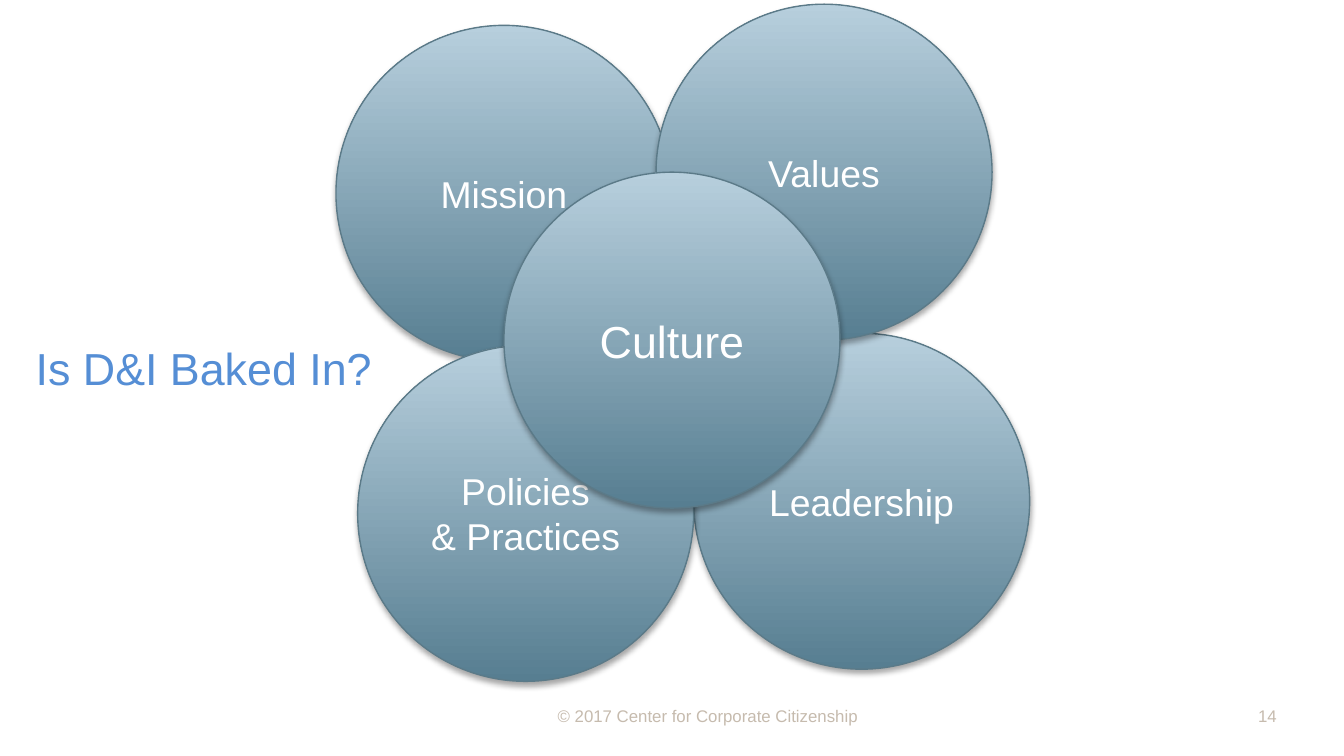
import dataclasses

import pptx
import pptx.dml.color
import pptx.enum.shapes
import pptx.enum.text
import pptx.oxml
import pptx.oxml.ns
import pptx.util

Cm = pptx.util.Cm
Pt = pptx.util.Pt
Rgb = pptx.dml.color.RGBColor.from_string
Align = pptx.enum.text.PP_ALIGN
Anchor = pptx.enum.text.MSO_ANCHOR
Fit = pptx.enum.text.MSO_AUTO_SIZE


@dataclasses.dataclass(frozen=True)
class Theme:
    """Colours, font and type sizes of the slide."""
    font: str = "Arial"
    title: str = "558ED5"
    deep: str = "577E91"
    pale: str = "B7CFDD"
    edge: str = "5B7A88"
    label: str = "FFFFFF"
    muted: str = "C6BBAE"
    shade: str = "000000"
    large: int = 24
    body: int = 20
    small: int = 9


@dataclasses.dataclass(frozen=True)
class Box:
    """A region measured in centimetres."""
    left: float
    top: float
    width: float
    height: float

    def place(self, shape):
        """Move and size a shape to fill this box."""
        shape.left, shape.top = Cm(self.left), Cm(self.top)
        shape.width, shape.height = Cm(self.width), Cm(self.height)


THEME = Theme()


def write(shape, text, *, size, color, align=Align.LEFT, wrap=True, inset=None, fit=Fit.NONE):
    """Fill a shape with formatted text, one paragraph per line."""
    frame = shape.text_frame
    frame.text = text
    frame.auto_size = fit
    frame.word_wrap = wrap
    frame.vertical_anchor = Anchor.MIDDLE
    if inset is not None:
        frame.margin_left = frame.margin_right = Cm(inset)
        frame.margin_top = frame.margin_bottom = Cm(inset)
    for para in frame.paragraphs:
        para.alignment = align
        para.font.name = THEME.font
        para.font.size = Pt(size)
        para.font.color.rgb = Rgb(color)


def shadow(shape):
    """Give a shape a soft shadow straight below it."""
    shape.shadow.inherit = False
    effects = shape._element.spPr.find(pptx.oxml.ns.qn("a:effectLst"))
    effects.append(pptx.oxml.parse_xml(
        f'<a:outerShdw {pptx.oxml.ns.nsdecls("a")} blurRad="{Pt(3.1)}" dist="{Pt(1.8)}" '
        f'dir="5400000" rotWithShape="0"><a:srgbClr val="{THEME.shade}">'
        '<a:alpha val="35000"/></a:srgbClr></a:outerShdw>'))


def circle(slide, box, text, size):
    """Draw one labelled gradient circle."""
    shape = slide.shapes.add_shape(pptx.enum.shapes.MSO_SHAPE.OVAL, 0, 0, 0, 0)
    box.place(shape)
    shape.fill.gradient()
    shape.fill.gradient_angle = 90
    for stop, color in zip(shape.fill.gradient_stops, (THEME.deep, THEME.pale)):
        stop.color.rgb = Rgb(color)
    shape.line.color.rgb = Rgb(THEME.edge)
    shape.line.width = Pt(0.75)
    shadow(shape)
    write(shape, text, size=size, color=THEME.label, align=Align.CENTER)


def flower(slide, box):
    """Place four petals and the centre circle over them."""
    side = 6.35
    petals = (
        ("Leadership", 6.76, 6.22),
        ("Mission", 0, 0.4),
        ("Values", 6.05, 0),
        ("Policies\n& Practices", 0.41, 6.45),
    )
    for text, x, y in petals:
        circle(slide, Box(box.left + x, box.top + y, side, side), text, THEME.body)
    circle(slide, Box(box.left + side / 2, box.top + side / 2, side, side),
           "Culture", THEME.large)


def heading(slide, box):
    """Place the slide title."""
    title = slide.shapes.title
    box.place(title)
    write(title, "Is D&I Baked In?", size=THEME.large, color=THEME.title,
          wrap=False, fit=Fit.SHAPE_TO_FIT_TEXT)


def footer(slide, box):
    """Place the copyright line at left and the page number at right."""
    page = 5.92
    parts = (
        ("© 2017 Center for Corporate Citizenship", 0, 5.79, Align.LEFT),
        ("14", box.width - page, page, Align.RIGHT),
    )
    for text, x, width, align in parts:
        label = slide.shapes.add_textbox(0, 0, 0, 0)
        Box(box.left + x, box.top, width, box.height).place(label)
        write(label, text, size=THEME.small, color=THEME.muted, align=align, inset=0)


def main():
    """Build and save the slide."""
    deck = pptx.Presentation()
    deck.slide_width, deck.slide_height = Cm(25.4), Cm(14.29)
    slide = deck.slides.add_slide(deck.slide_layouts.get_by_name("Title Only"))
    heading(slide, Box(0.42, 6.3, 6.93, 1.28))
    flower(slide, Box(6.35, 0.08, 13.11, 12.8))
    footer(slide, Box(10.54, 13.16, 13.59, 0.76))
    deck.save("out.pptx")


if __name__ == "__main__":
    main()
